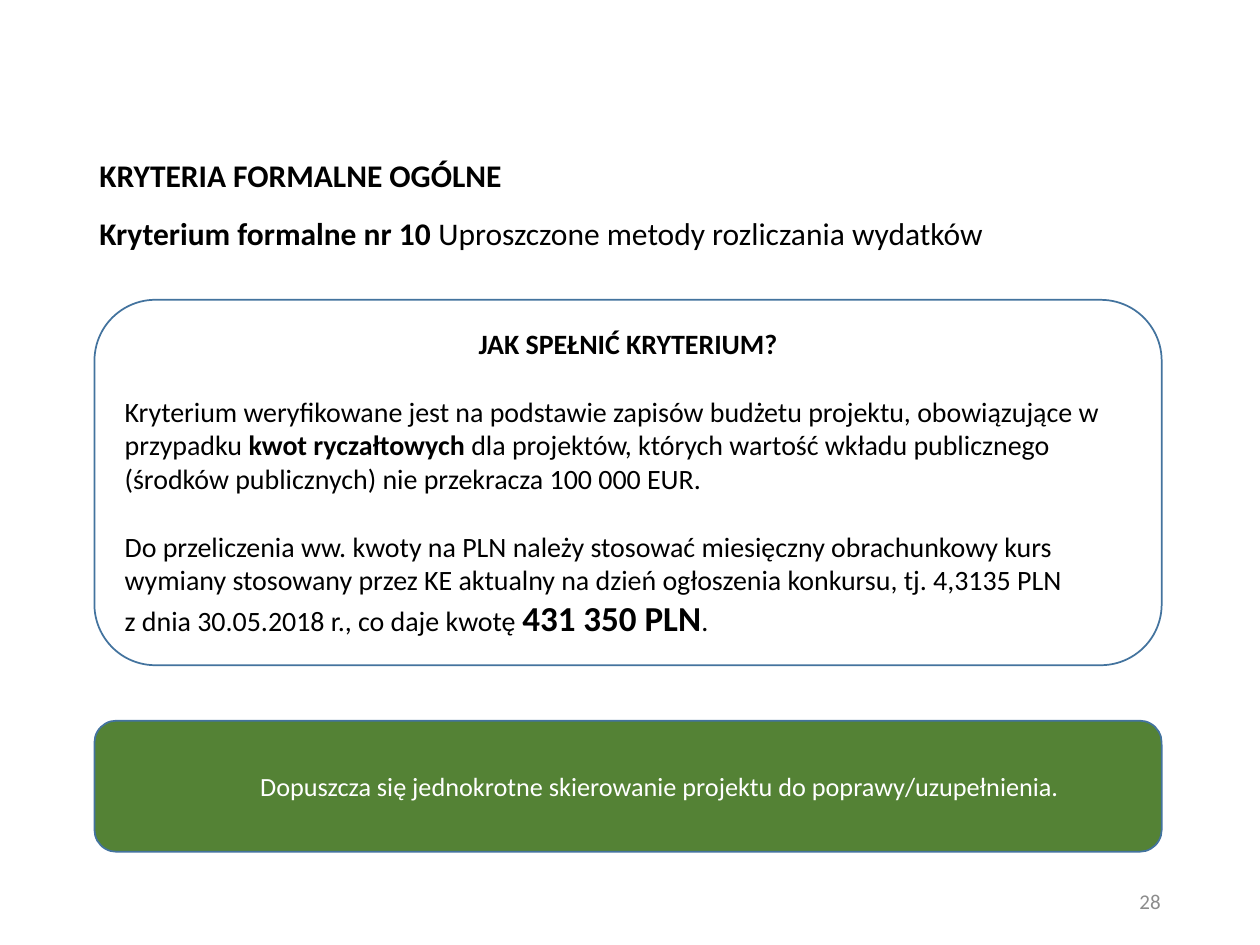
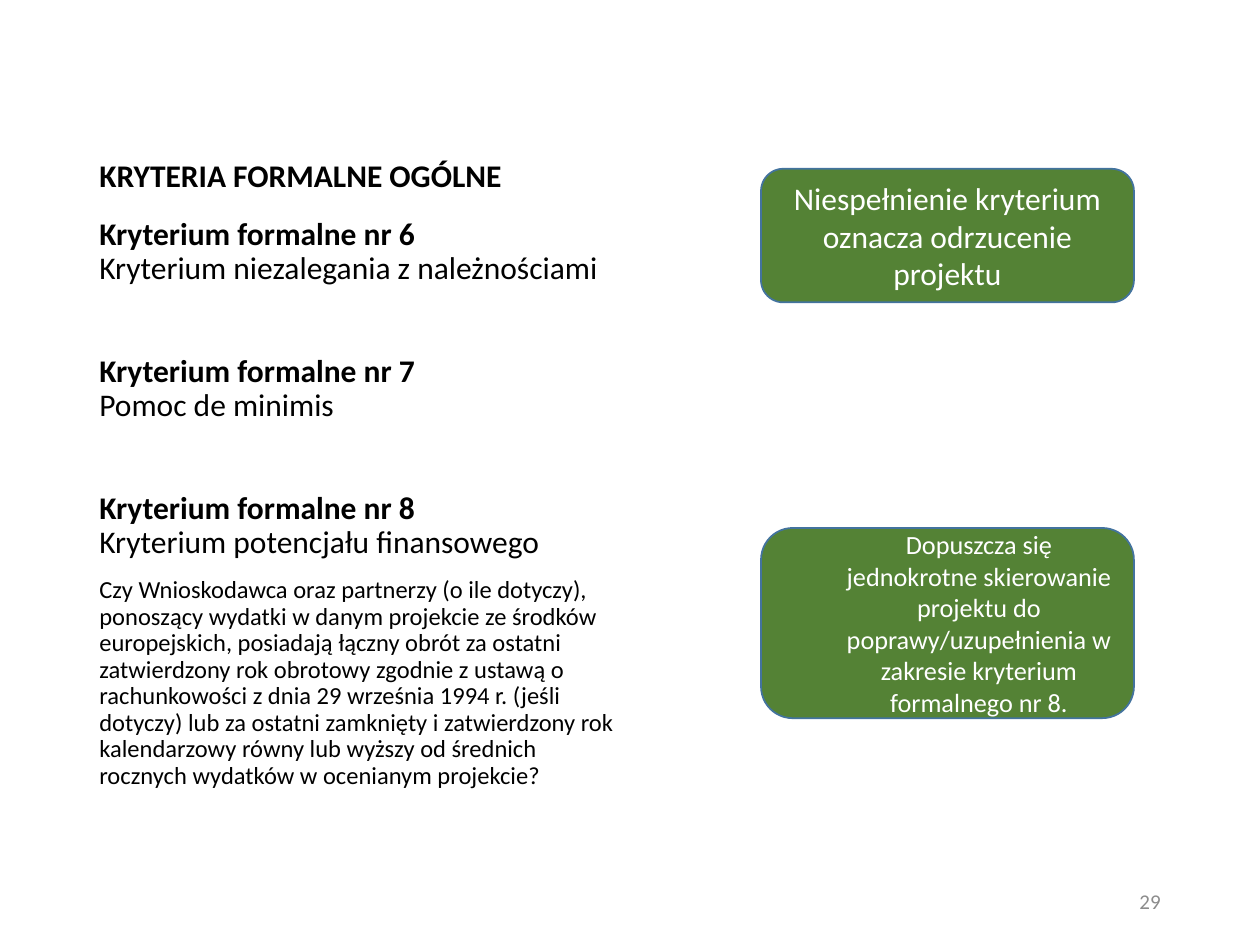
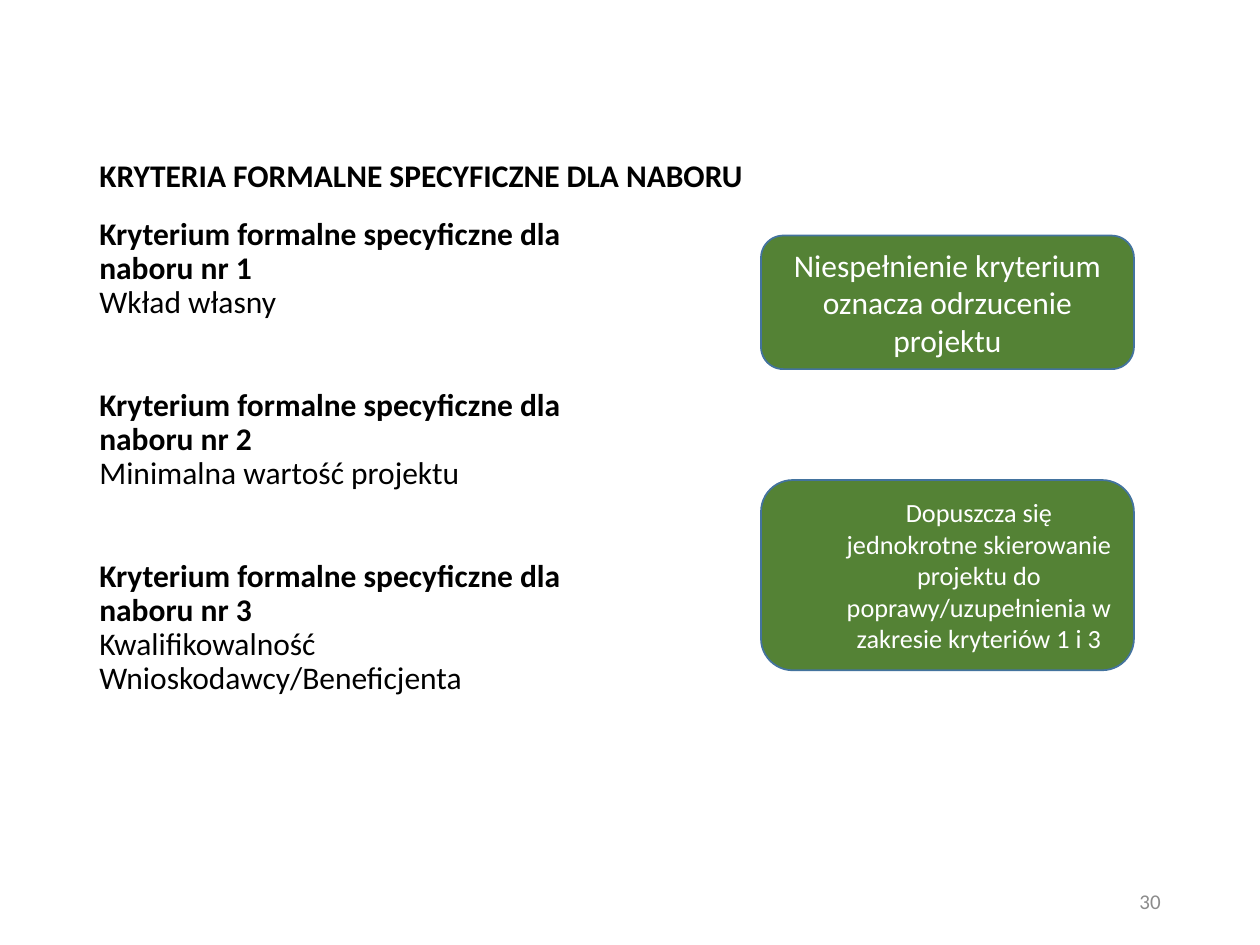
from pptx import Presentation
from pptx.dml.color import RGBColor
from pptx.enum import shapes, text
from pptx.util import Inches, Pt

BLACK = RGBColor(0x00, 0x00, 0x00)
WHITE = RGBColor(0xFF, 0xFF, 0xFF)
GREY = RGBColor(0x8C, 0x8C, 0x8C)
GREEN = RGBColor(0x54, 0x82, 0x35)
BLUE = RGBColor(0x43, 0x73, 0x9E)

LEFT = text.PP_ALIGN.LEFT
MID = text.PP_ALIGN.CENTER
RIGHT = text.PP_ALIGN.RIGHT
TOP = text.MSO_ANCHOR.TOP
CORE = text.MSO_ANCHOR.MIDDLE

FAIL = "Niespełnienie kryterium oznacza odrzucenie projektu"
FIX = "Dopuszcza się jednokrotne skierowanie projektu do poprawy/uzupełnienia"


def assign(item, values):
    for name, value in values.items():
        setattr(item, name, value)


def para(*runs, **style):
    return runs, style


def bold(words, size=None):
    return words, True, size


class Deck:
    font = "Calibri"

    def __init__(self):
        self.file = Presentation()
        assign(self.file, {"slide_width": Inches(10), "slide_height": Inches(7.5)})
        self.slide = None

    def page(self, title, number):
        self.slide = self.file.slides.add_slide(self.file.slide_layouts[6])
        self.label((0.69, 1.05, 8.62, 0.71), [para(bold(title), line_spacing=0.9)], 18, BLACK)
        self.label((7.06, 6.95, 2.25, 0.4), [para(str(number), alignment=RIGHT)], 12, GREY)

    def label(self, area, paras, size, color, anchor=CORE):
        box = self.slide.shapes.add_textbox(*map(Inches, area))
        self.fill_text(box.text_frame, paras, size, color, anchor)

    def body(self, paras, width=4.41, height=4.79):
        spaced = [(runs, {"line_spacing": 0.9, **style}) for runs, style in paras]
        self.label((0.69, 1.68, width, height), spaced, 18, BLACK, TOP)

    def card(self, area, paras, size, fill=GREEN, color=WHITE):
        kind = shapes.MSO_SHAPE.ROUNDED_RECTANGLE
        card = self.slide.shapes.add_shape(kind, *map(Inches, area))
        card.shadow.inherit = False
        card.fill.solid()
        card.fill.fore_color.rgb = fill
        card.line.color.rgb = BLUE
        card.line.width = Pt(1)
        self.fill_text(card.text_frame, paras, size, color, CORE)

    def fail(self, top):
        self.card((6.04, top, 2.96, 1.06), [para(FAIL, alignment=MID)], 18)

    def fix(self, area, ending):
        self.card(area, [para(FIX + ending, alignment=MID, level=1)], 15)

    def fill_text(self, frame, paras, size, color, anchor):
        assign(frame, {"word_wrap": True, "vertical_anchor": anchor})
        for index, (runs, style) in enumerate(paras):
            line = frame.add_paragraph() if index else frame.paragraphs[0]
            assign(line, {"alignment": LEFT, **style})
            if line.level:
                props = line._p.get_or_add_pPr()
                props.set("marL", str(Inches(0.5)))
                props.set("indent", "0")
            for run in runs:
                if run == "\n":
                    line.add_line_break()
                    continue
                words, heavy, own = run if isinstance(run, tuple) else (run, False, None)
                piece = line.add_run()
                piece.text = words
                assign(piece.font, {"name": self.font, "size": Pt(own or size), "bold": heavy})
                piece.font.color.rgb = color


def items(stem, names):
    return [
        para(bold(f"{stem} nr {number}"), "\n", name, space_before=Pt(39.5 if index else 0))
        for index, (number, name) in enumerate(names.items())
    ]


def main():
    deck = Deck()

    deck.page("KRYTERIA FORMALNE OGÓLNE", 28)
    deck.body(
        [para(bold("Kryterium formalne nr 10"), " Uproszczone metody rozliczania wydatków")],
        8.62, 0.7,
    )
    gap = Pt(19.5)
    deck.card((0.75, 2.38, 8.47, 2.9), [
        para(bold("JAK SPEŁNIĆ KRYTERIUM?"), alignment=MID),
        para(
            "Kryterium weryfikowane jest na podstawie zapisów budżetu projektu, "
            "obowiązujące w przypadku ",
            bold("kwot ryczałtowych"),
            " dla projektów, których wartość wkładu publicznego (środków publicznych) "
            "nie przekracza 100 000 EUR.",
            space_before=gap,
        ),
        para(
            "Do przeliczenia ww. kwoty na PLN należy stosować miesięczny obrachunkowy kurs "
            "wymiany stosowany przez KE aktualny na dzień ogłoszenia konkursu, tj. 4,3135 PLN",
            "\n",
            "z dnia 30.05.2018 r., co daje kwotę ",
            bold("431 350 PLN", 20),
            ".",
            space_before=gap,
        ),
    ], 16, WHITE, BLACK)
    deck.fix((0.75, 5.72, 8.47, 1.04), ".")

    deck.page("KRYTERIA FORMALNE OGÓLNE", 29)
    query = (
        "Czy Wnioskodawca oraz partnerzy (o ile dotyczy), ponoszący wydatki w danym projekcie "
        "ze środków europejskich, posiadają łączny obrót za ostatni zatwierdzony rok obrotowy "
        "zgodnie z ustawą o rachunkowości z dnia 29 września 1994 r. (jeśli dotyczy) lub za "
        "ostatni zamknięty i zatwierdzony rok kalendarzowy równy lub wyższy od średnich "
        "rocznych wydatków w ocenianym projekcie?"
    )
    deck.body(items("Kryterium formalne", {
        6: "Kryterium niezalegania z należnościami",
        7: "Pomoc de minimis",
        8: "Kryterium potencjału finansowego",
    }) + [para((query, False, 14), space_before=Pt(10))])
    deck.fail(1.34)
    deck.fix((6.04, 4.19, 2.96, 1.51), " w zakresie kryterium formalnego nr 8.")

    deck.page("KRYTERIA FORMALNE SPECYFICZNE DLA NABORU", 30)
    deck.body(items("Kryterium formalne specyficzne dla naboru", {
        1: "Wkład własny",
        2: "Minimalna wartość projektu",
        3: "Kwalifikowalność Wnioskodawcy/Beneficjenta",
    }))
    deck.fail(1.87)
    deck.fix((6.04, 3.81, 2.96, 1.51), " w zakresie kryteriów 1 i 3")

    deck.file.save("out.pptx")


if __name__ == "__main__":
    main()
